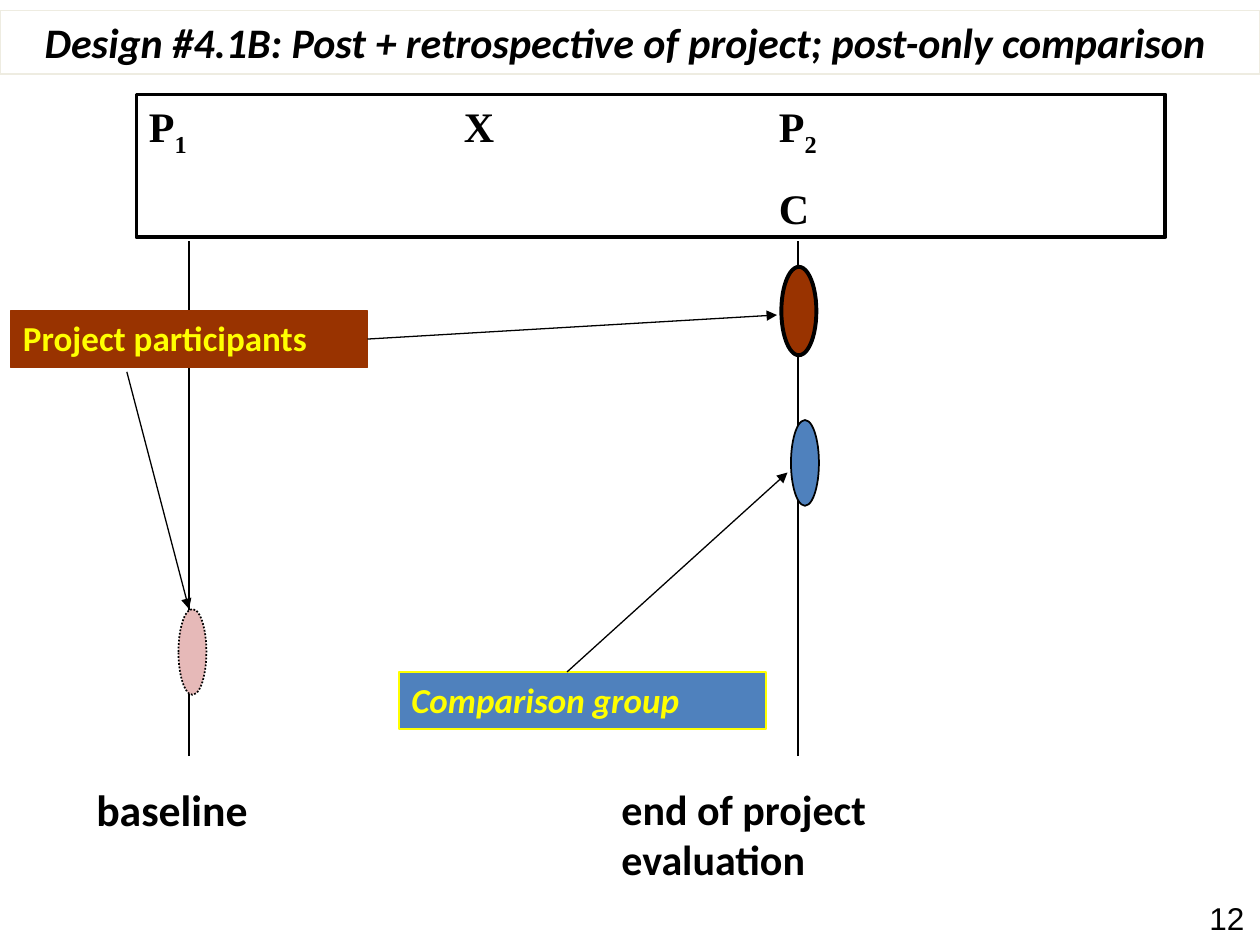
from dataclasses import dataclass

from lxml import etree
from pptx import Presentation
from pptx.dml.color import RGBColor
from pptx.enum.dml import MSO_LINE
from pptx.enum.shapes import MSO_CONNECTOR, MSO_SHAPE
from pptx.enum.text import PP_ALIGN
from pptx.oxml.ns import qn
from pptx.util import Pt

RECTANGLE = MSO_SHAPE.RECTANGLE
OVAL = MSO_SHAPE.OVAL
STRAIGHT = MSO_CONNECTOR.STRAIGHT
DOTTED = MSO_LINE.ROUND_DOT
LEFT = PP_ALIGN.LEFT
CENTER = PP_ALIGN.CENTER
RIGHT_SIDE = 3

COLORS = {
    "black": "000000",
    "brown": "993300",
    "blue": "4F81BD",
    "pink": "E6B9B8",
    "yellow": "FFFF00",
    "cream": "EEECE1",
}

BASELINE_X, EVALUATION_X = 108, 456
TIMELINE_TOP, TIMELINE_BOTTOM = 138, 432
DESIGN_TAB_STOPS = (180, 360)


@dataclass
class Box:
    left: float
    top: float
    width: float
    height: float
    fill: str | None = None
    line: str | None = None
    line_width: float = 1
    dash: MSO_LINE | None = None


@dataclass
class Label:
    text: str
    size: float
    color: str = "black"
    font: str = "Calibri"
    bold: bool = True
    italic: bool = False
    alignment: PP_ALIGN = LEFT


@dataclass
class Segment:
    start: tuple[float, float]
    end: tuple[float, float]
    width: float = 0.75
    arrow: bool = True


def rgb(name: str) -> RGBColor:
    return RGBColor.from_string(COLORS[name])


def format_run(run, label: Label) -> None:
    font = run.font
    font.name = label.font
    font.size = Pt(label.size)
    font.bold = label.bold
    font.italic = label.italic
    font.color.rgb = rgb(label.color)


def write_label(shape, label: Label) -> None:
    text_frame = shape.text_frame
    text_frame.word_wrap = True
    text_frame.text = label.text
    paragraph = text_frame.paragraphs[0]
    paragraph.alignment = label.alignment
    format_run(paragraph.runs[0], label)


def add_box(slide, kind: MSO_SHAPE, box: Box, label: Label | None = None):
    shape = slide.shapes.add_shape(
        kind, Pt(box.left), Pt(box.top), Pt(box.width), Pt(box.height))
    shape.shadow.inherit = False
    if box.fill:
        shape.fill.solid()
        shape.fill.fore_color.rgb = rgb(box.fill)
    else:
        shape.fill.background()
    shape.line.color.rgb = rgb(box.line)
    shape.line.width = Pt(box.line_width)
    if box.dash:
        shape.line.dash_style = box.dash
    if label:
        write_label(shape, label)
        shape.text_frame.vertical_anchor = None
    return shape


def add_caption(slide, box: Box, label: Label) -> None:
    shape = slide.shapes.add_textbox(
        Pt(box.left), Pt(box.top), Pt(box.width), Pt(box.height))
    write_label(shape, label)


def add_segment(slide, segment: Segment):
    connector = slide.shapes.add_connector(
        STRAIGHT, *(Pt(value) for value in segment.start + segment.end))
    connector.line.color.rgb = rgb("black")
    connector.line.width = Pt(segment.width)
    if segment.arrow:
        line_xml = connector.line._get_or_add_ln()
        etree.SubElement(line_xml, qn("a:tailEnd"), type="triangle")
    etree.SubElement(connector._element.spPr, qn("a:effectLst"))
    return connector


def write_design_row(paragraph, parts: tuple[str, ...]) -> None:
    """Write tabbed text in which every second part is a subscript."""
    style = Label("", 24, font="Times New Roman")
    paragraph.alignment = LEFT
    for index, part in enumerate(parts):
        run = paragraph.add_run()
        run.text = part
        format_run(run, style)
        if index % 2:
            run._r.get_or_add_rPr().set("baseline", "-25000")
    tab_list = etree.SubElement(paragraph._p.get_or_add_pPr(), qn("a:tabLst"))
    for stop in DESIGN_TAB_STOPS:
        etree.SubElement(tab_list, qn("a:tab"), pos=str(Pt(stop)), algn="l")


def add_design_frame(slide) -> None:
    frame = add_box(slide, RECTANGLE,
                    Box(78, 54, 588, 81.5, line="black", line_width=2.25))
    text_frame = frame.text_frame
    text_frame.vertical_anchor = None
    write_design_row(text_frame.paragraphs[0], ("P", "1", "\tX\tP", "2"))
    comparison_row = text_frame.add_paragraph()
    write_design_row(comparison_row, ("\t\tC",))
    comparison_row.space_before = Pt(14)


def main() -> None:
    presentation = Presentation()
    presentation.slide_width, presentation.slide_height = Pt(720), Pt(540)
    slide = presentation.slides.add_slide(presentation.slide_layouts[6])

    for x in (BASELINE_X, EVALUATION_X):
        add_segment(slide, Segment((x, TIMELINE_BOTTOM), (x, TIMELINE_TOP),
                                   width=1, arrow=False))
    add_caption(slide, Box(48, 444, 180, 37.5), Label("baseline", 25))
    add_caption(slide, Box(348, 444, 186, 65),
                Label("end of project evaluation", 24))

    for oval in (
        Box(446.5, 152.5, 20, 50.5, "brown", "black", 2.25),
        Box(102, 348, 16, 49, "pink", "black", dash=DOTTED),
        Box(452, 240, 16, 49, "blue", "black"),
    ):
        add_box(slide, OVAL, oval)

    add_box(slide, RECTANGLE, Box(228, 384, 210, 32.5, "blue", "yellow"),
            Label("Comparison group", 20, "yellow", italic=True))
    add_box(slide, RECTANGLE, Box(0, 6, 720, 36.5, line="cream"),
            Label("Design #4.1B: Post + retrospective of project; "
                  "post-only comparison ", 24, italic=True, alignment=CENTER))
    add_design_frame(slide)
    participants = add_box(
        slide, RECTANGLE, Box(6, 177.5, 204, 32.5, "brown", "brown"),
        Label("Project participants", 20, "yellow"))

    add_segment(slide, Segment((72.5, 212.5), (BASELINE_X, 348)))
    to_evaluation = add_segment(slide, Segment((210, 193.75), (444, 180)))
    to_evaluation.begin_connect(participants, RIGHT_SIDE)
    add_segment(slide, Segment((324, 384), (450, 270)))

    add_caption(slide, Box(684, 510, 60, 27),
                Label("12", 18, font="Arial", bold=False))
    presentation.save("out.pptx")


if __name__ == "__main__":
    main()
